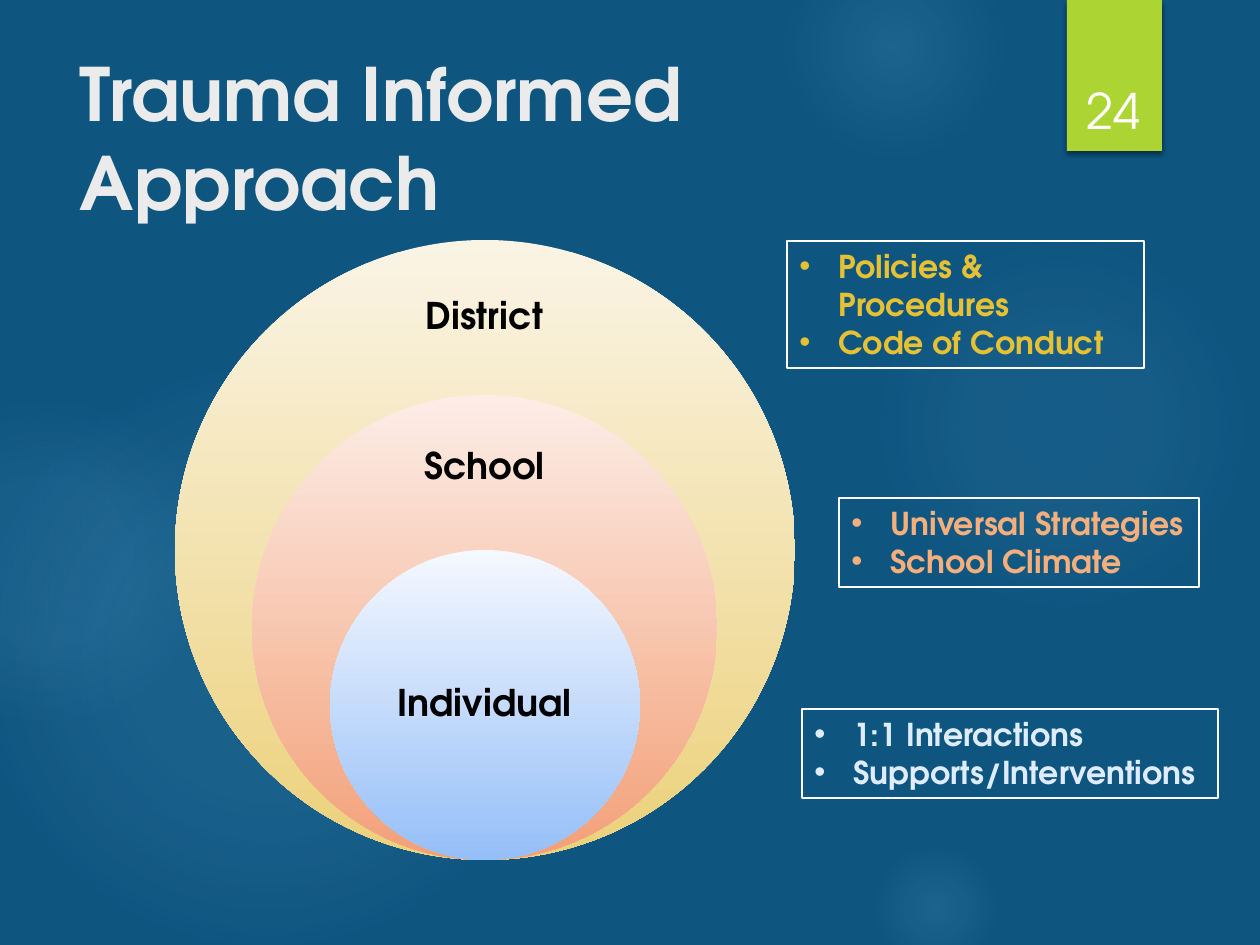
from dataclasses import dataclass

from lxml import etree
from pptx import Presentation
from pptx.dml import color
from pptx.enum import shapes, text
from pptx.oxml import ns
from pptx.util import Pt

SCALE = 914400 / 126


@dataclass(frozen=True)
class Theme:
    font: str = "TeX Gyre Adventor"
    background: str = "0E5580"
    glow: str = "7AC4F0"
    accent: str = "ACD433"
    white: str = "FFFFFF"
    black: str = "000000"
    title: str = "EBEBEB"
    gold: str = "E6C133"
    orange: str = "F5AF7C"
    pale_blue: str = "DEECFD"
    title_size: int = 42
    number_size: int = 28
    label_size: int = 21
    note_size: int = 18


THEME = Theme()

GLOWS = [
    ((868, 231, 388), [(0, 7), (36, 6), (69, 0)]),
    ((784, -63, 220), [(0, 14), (36, 7), (73, 0)]),
    ((868, 840, 136), [(0, 14), (36, 7), (66, 0)]),
    ((-21, 368, 577), [(0, 11), (36, 10), (75, 0)]),
    ((-116, 399, 325), [(0, 8), (36, 8), (72, 0)]),
]
RINGS = [
    ("District", "FAF4E5", "ECD17B", 31, 93),
    ("School", "FCEDE7", "F3A078", 29, 87),
    ("Individual", "F5F8FE", "96BFF8", 77, 155),
]
NOTES = [
    ((787, 241, 357, 127), THEME.gold, True,
     ["Policies & Procedures", "Code of Conduct"]),
    ((839, 498, 360, 89), THEME.orange, False,
     ["Universal Strategies", "School Climate"]),
    ((802, 709, 416, 89), THEME.pale_blue, True,
     ["1:1 Interactions", "Supports/Interventions"]),
]


def px(length):
    return round(length * SCALE)


def rgb(value):
    return color.RGBColor.from_string(value)


def add_node(parent, tag, **attributes):
    node = etree.SubElement(parent, ns.qn(tag))
    for name, value in attributes.items():
        node.set(name, str(value))
    return node


def add_run(paragraph, wording, size, colour, bold=True):
    run = paragraph.add_run()
    run.text = wording
    run.font.name = THEME.font
    run.font.size = Pt(size)
    run.font.bold = bold
    run.font.color.rgb = rgb(colour)


def add_plain_shape(slide, kind, box):
    shape = slide.shapes.add_shape(kind, *map(px, box))
    shape.shadow.inherit = False
    shape.fill.background()
    shape.line.fill.background()
    return shape


def add_text_box(slide, box, anchor, inset=None):
    frame = slide.shapes.add_textbox(*map(px, box)).text_frame
    frame.word_wrap = True
    frame.vertical_anchor = anchor
    if inset is not None:
        frame.margin_left = frame.margin_right = px(inset)
        frame.margin_top = frame.margin_bottom = px(inset)
    paragraph = frame.paragraphs[0]
    paragraph.alignment = text.PP_ALIGN.CENTER
    return paragraph


def set_gradient(shape, stops, radial=False):
    properties = shape.element.spPr
    gradient = etree.Element(ns.qn("a:gradFill"), rotWithShape="1")
    stop_list = add_node(gradient, "a:gsLst")
    for position, colour, opacity in stops:
        stop = add_node(stop_list, "a:gs", pos=position * 1000)
        shade = add_node(stop, "a:srgbClr", val=colour)
        if opacity < 100:
            add_node(shade, "a:alpha", val=opacity * 1000)
    if radial:
        centre = add_node(gradient, "a:path", path="circle")
        add_node(centre, "a:fillToRect", l=50000, t=50000, r=50000, b=50000)
    else:
        add_node(gradient, "a:lin", ang=5400000, scaled=0)
    properties.replace(properties.find(ns.qn("a:noFill")), gradient)


def draw_backdrop(slide):
    slide.background.fill.solid()
    slide.background.fill.fore_color.rgb = rgb(THEME.background)
    for (left, top, diameter), stops in GLOWS:
        glow = add_plain_shape(slide, shapes.MSO_SHAPE.OVAL, (left, top, diameter, diameter))
        set_gradient(glow, [(position, THEME.glow, opacity) for position, opacity in stops], True)


def draw_number_tab(slide, box, number):
    left, top, width, height = box
    tab = add_plain_shape(slide, shapes.MSO_SHAPE.RECTANGLE, box)
    tab.fill.solid()
    tab.fill.fore_color.rgb = rgb(THEME.accent)
    effects = tab.element.spPr.find(ns.qn("a:effectLst"))
    shadow = add_node(effects, "a:outerShdw", blurRad=Pt(3), dist=Pt(2), dir=5400000, rotWithShape=0)
    add_node(add_node(shadow, "a:srgbClr", val=THEME.black), "a:alpha", val=45000)
    paragraph = add_text_box(slide, (left + 3, top + 40, width - 8, height - 45), text.MSO_ANCHOR.BOTTOM)
    add_run(paragraph, number, THEME.number_size, THEME.white, False)


def draw_title(slide, box, wording):
    title = slide.shapes.title
    title.element.getparent().append(title.element)
    title.left, title.top, title.width, title.height = map(px, box)
    frame = title.text_frame
    frame.word_wrap = True
    frame.auto_size = text.MSO_AUTO_SIZE.NONE
    frame.vertical_anchor = text.MSO_ANCHOR.TOP
    paragraph = frame.paragraphs[0]
    paragraph.alignment = text.PP_ALIGN.LEFT
    add_run(paragraph, wording, THEME.title_size, THEME.title)


def draw_nested_circles(slide, box):
    left, top, width, height = box
    label_width = 219
    for index, (wording, light, dark, label_drop, label_height) in enumerate(RINGS):
        diameter = width * (4 - index) // 4
        ring_top = top + height - diameter
        ring_left = left + (width - diameter) // 2
        ring = add_plain_shape(slide, shapes.MSO_SHAPE.OVAL, (ring_left, ring_top, diameter, diameter))
        set_gradient(ring, [(0, light, 100), (100, dark, 100)])
        label_box = (left + (width - label_width) // 2, ring_top + label_drop, label_width, label_height)
        paragraph = add_text_box(slide, label_box, text.MSO_ANCHOR.MIDDLE, 20)
        paragraph.line_spacing = 0.9
        add_run(paragraph, wording, THEME.label_size, THEME.black)


def draw_note(slide, box, colour, wraps, lines):
    note = add_plain_shape(slide, shapes.MSO_SHAPE.RECTANGLE, box)
    note.line.color.rgb = rgb(THEME.white)
    note.line.width = Pt(0.75)
    frame = note.text_frame
    frame.word_wrap = wraps
    frame.auto_size = text.MSO_AUTO_SIZE.SHAPE_TO_FIT_TEXT
    frame.vertical_anchor = text.MSO_ANCHOR.TOP
    for index, wording in enumerate(lines):
        paragraph = frame.add_paragraph() if index else frame.paragraphs[0]
        paragraph.alignment = text.PP_ALIGN.LEFT
        properties = paragraph._p.get_or_add_pPr()
        properties.set("marL", str(px(39)))
        properties.set("indent", str(-px(39)))
        add_node(properties, "a:buFont", typeface="Arial")
        add_node(properties, "a:buChar", char="•")
        add_run(paragraph, wording, THEME.note_size, colour)


def main():
    presentation = Presentation()
    presentation.slide_width, presentation.slide_height = px(1260), px(945)
    slide = presentation.slides.add_slide(presentation.slide_layouts[5])
    draw_backdrop(slide)
    draw_number_tab(slide, (1067, 0, 95, 151), "24")
    draw_title(slide, (67, 42, 973, 193), "Trauma Informed Approach")
    draw_nested_circles(slide, (175, 240, 620, 620))
    for note in NOTES:
        draw_note(slide, *note)
    presentation.save("out.pptx")


if __name__ == "__main__":
    main()
